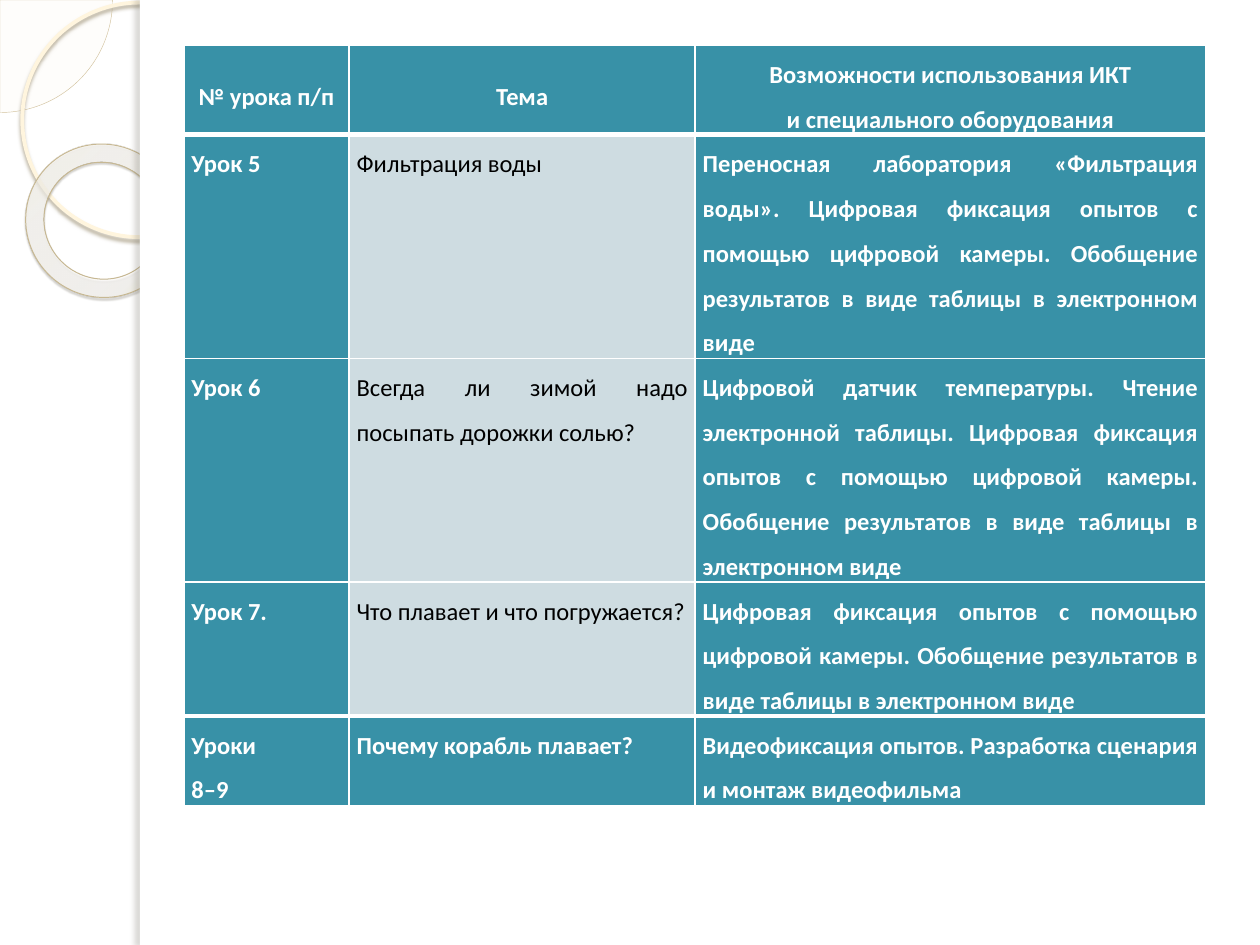
import pptx
import pptx.dml.color
import pptx.enum.shapes
import pptx.enum.text
import pptx.oxml
import pptx.oxml.ns
import pptx.util

Pt = pptx.util.Pt
SHAPE = pptx.enum.shapes.MSO_SHAPE
ALIGN = pptx.enum.text.PP_ALIGN
ANCHOR = pptx.enum.text.MSO_ANCHOR
NAMESPACE = pptx.oxml.ns.nsdecls("a")

WHITE, BLACK = "FFFFFF", "000000"
TEAL, PALE = "3891A7", "CEDCE1"

COLUMN_WIDTHS = [94.4, 197.8, 291.7]
ROW_HEIGHTS = [49, 81.4, 79.2, 67, 49]
LESSONS = [
    ["№ урока п/п", "Тема",
     "Возможности использования ИКТ\nи специального оборудования"],
    ["Урок 5", "Фильтрация воды",
     "Переносная лаборатория «Фильтрация воды». Цифровая фиксация опытов с помощью "
     "цифровой камеры. Обобщение результатов в виде таблицы в электронном виде"],
    ["Урок 6", "Всегда ли зимой надо посыпать дорожки солью?",
     "Цифровой датчик температуры. Чтение электронной таблицы. Цифровая фиксация опытов "
     "с помощью цифровой камеры. Обобщение результатов в виде таблицы в электронном виде"],
    ["Урок 7.", "Что плавает и что погружается?",
     "Цифровая фиксация опытов с помощью цифровой камеры. Обобщение результатов "
     "в виде таблицы в электронном виде"],
    ["Уроки\n8–9", "Почему корабль плавает?",
     "Видеофиксация опытов. Разработка сценария и монтаж видеофильма"],
]


def color(value):
    return pptx.dml.color.RGBColor.from_string(value)


def apply_format(target, values):
    for name, value in values.items():
        setattr(target, name, value)


def color_xml(value, opacity=100):
    return (f'<a:srgbClr {NAMESPACE} val="{value}">'
            f'<a:alpha val="{opacity * 1000}"/></a:srgbClr>')


def add_decoration(slide, kind, box, fill=None, opacity=100, line=None, shadow=None):
    """Add a shape; line is (color, width), shadow is (color, opacity, blur, distance, angle)."""
    shape = slide.shapes.add_shape(kind, *map(Pt, box))
    if fill:
        shape.fill.solid()
        shape.fill.fore_color.rgb = color(fill)
        solid = shape.element.spPr.find(pptx.oxml.ns.qn("a:solidFill"))
        solid.replace(solid[0], pptx.oxml.parse_xml(color_xml(fill, opacity)))
    else:
        shape.fill.background()
    if line:
        shape.line.color.rgb = color(line[0])
        shape.line.width = Pt(line[1])
    else:
        shape.line.fill.background()
    shape.shadow.inherit = False
    if shadow:
        shade, strength, blur, distance, angle = shadow
        effects = shape.element.spPr.find(pptx.oxml.ns.qn("a:effectLst"))
        effects.append(pptx.oxml.parse_xml(
            f'<a:outerShdw {NAMESPACE} blurRad="{Pt(blur)}" dist="{Pt(distance)}" '
            f'dir="{angle * 60000}" algn="tl" rotWithShape="0">'
            f'{color_xml(shade, strength)}</a:outerShdw>'))
    return shape


def set_radial_gradient(shape, stops):
    """Replace the shape's empty fill by a circular gradient."""
    stop_list = "".join(f'<a:gs pos="{position * 1000}">{color_xml(value, opacity)}</a:gs>'
                        for position, value, opacity in stops)
    properties = shape.element.spPr
    properties.replace(
        properties.find(pptx.oxml.ns.qn("a:noFill")),
        pptx.oxml.parse_xml(
            f'<a:gradFill {NAMESPACE} rotWithShape="1"><a:gsLst>{stop_list}</a:gsLst>'
            '<a:path path="circle"><a:fillToRect l="-408000" t="-50000" r="508000" '
            'b="150000"/></a:path></a:gradFill>'))


def add_side_ornament(slide):
    # Quarter disc in the corner
    quarter = add_decoration(slide, SHAPE.PIE, (-64.3, -64.3, 128.6, 128.6), "FEFAF4", 33,
                             line=("D3C39F", 0.25))
    quarter.adjustments[0] = 0
    quarter.adjustments[1] = 54.02
    # Large ring and small donut
    add_decoration(slide, SHAPE.OVAL, (12.7, 1.5, 134, 134), line=("FFF5DE", 2.15),
                   shadow=("B0A68F", 85, 2, 2, 90))
    donut = add_decoration(slide, SHAPE.DONUT, (14.4, 82.6, 88.6, 87.1),
                           line=("C7B893", 0.58), shadow=("5A5444", 35, 1, 1.2, 75))
    donut.adjustments[0] = 0.12
    donut.rotation = 38.6
    set_radial_gradient(donut, [(0, "FFFCF6", 70), (70, "FFFEFB", 55), (100, "F0D28E", 60)])
    # White page with a shaded left edge
    add_decoration(slide, SHAPE.RECTANGLE, (79.9, 0, 640.1, 540), WHITE)
    add_decoration(slide, SHAPE.RECTANGLE, (79.9, 0, 5.8, 540), WHITE,
                   shadow=("736F63", 25, 3, 3, 180))


def set_borders(cell, widths):
    properties = cell._tc.get_or_add_tcPr()
    for side, width in widths.items():
        properties.append(pptx.oxml.parse_xml(
            f'<a:ln{side} {NAMESPACE} w="{Pt(width)}"><a:solidFill>{color_xml(WHITE)}'
            f'</a:solidFill></a:ln{side}>'))


def fill_cell(cell, text, background, text_color, bold, header):
    cell.fill.solid()
    cell.fill.fore_color.rgb = color(background)
    apply_format(cell, {
        "margin_left": Pt(4.3), "margin_right": Pt(4.3), "margin_top": 0, "margin_bottom": 0,
        "vertical_anchor": ANCHOR.MIDDLE if header else ANCHOR.TOP})
    paragraph = cell.text_frame.paragraphs[0]
    paragraph.text = text
    apply_format(paragraph, {"alignment": ALIGN.CENTER if header else ALIGN.JUSTIFY,
                             "line_spacing": 1.5})
    for run in paragraph.runs:
        apply_format(run.font, {"name": "Calibri", "size": Pt(14), "bold": bold})
        run.font.color.rgb = color(text_color)


def add_lesson_table(slide):
    frame = slide.shapes.add_table(len(LESSONS), len(COLUMN_WIDTHS), Pt(105.1), Pt(25.9),
                                   Pt(sum(COLUMN_WIDTHS)), Pt(sum(ROW_HEIGHTS)))
    table = frame.table
    for column, width in zip(table.columns, COLUMN_WIDTHS):
        column.width = Pt(width)
    for row, height in zip(table.rows, ROW_HEIGHTS):
        row.height = Pt(height)
    last = len(LESSONS) - 1
    for row_index, texts in enumerate(LESSONS):
        for column_index, text in enumerate(texts):
            cell = table.cell(row_index, column_index)
            # Thick rules follow the header and precede the last row
            set_borders(cell, {"L": 1, "R": 1,
                               "T": 3 if row_index in (1, last) else 1,
                               "B": 3 if row_index in (0, last - 1) else 1})
            plain = column_index == 1 and 0 < row_index < last
            fill_cell(cell, text, PALE if plain else TEAL, BLACK if plain else WHITE,
                      not plain, row_index == 0)


def main():
    presentation = pptx.Presentation()
    apply_format(presentation, {"slide_width": Pt(720), "slide_height": Pt(540)})
    slide = presentation.slides.add_slide(presentation.slide_layouts[6])
    add_side_ornament(slide)
    add_lesson_table(slide)
    presentation.save("out.pptx")


if __name__ == "__main__":
    main()
